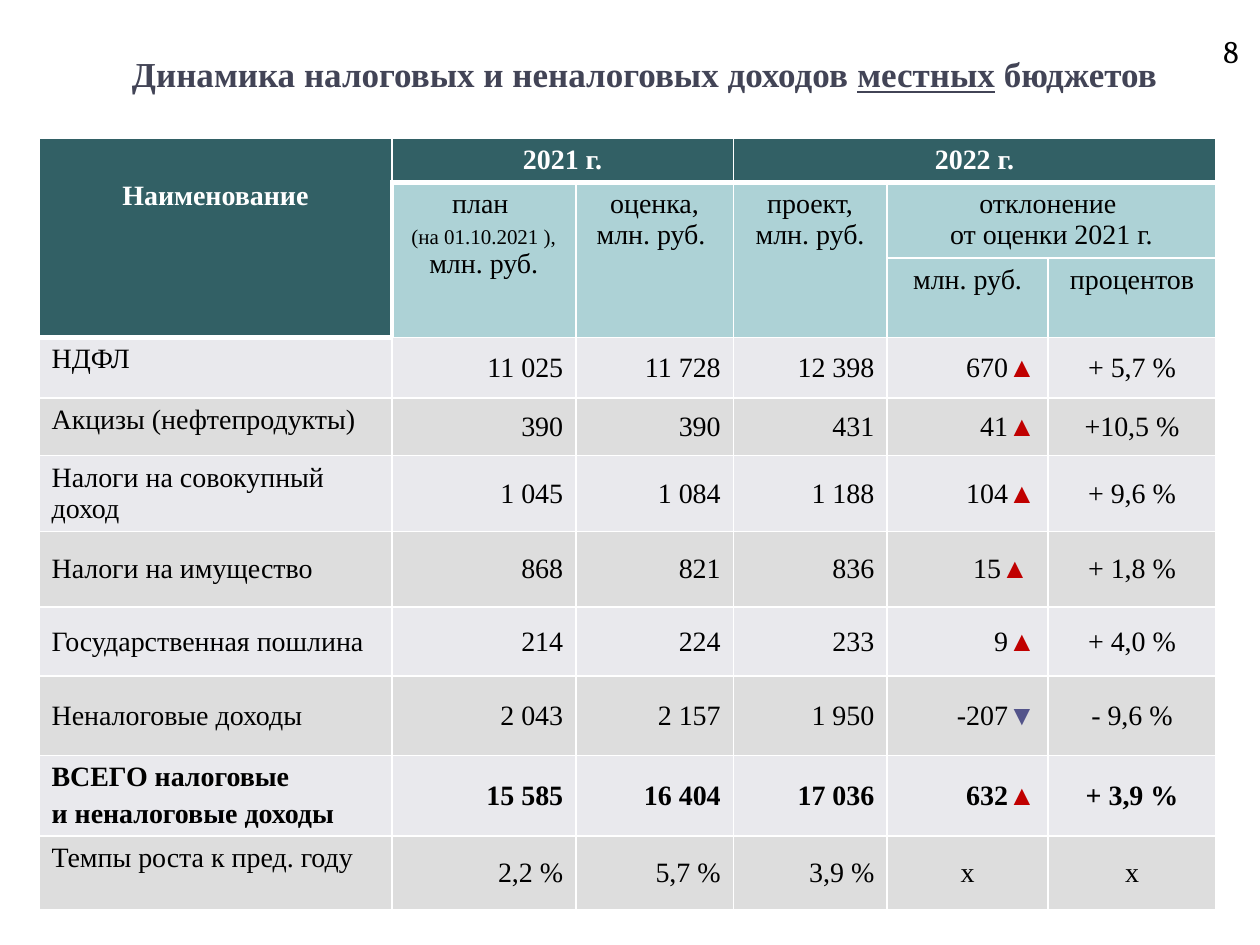
from lxml import etree
from pptx import Presentation
from pptx.dml import color
from pptx.enum import text
from pptx.oxml import ns
from pptx.util import Inches, Pt

FONT = "Times New Roman"
LEFT, CENTER, RIGHT = text.PP_ALIGN.LEFT, text.PP_ALIGN.CENTER, text.PP_ALIGN.RIGHT
TOP, MIDDLE, BOTTOM = text.MSO_ANCHOR.TOP, text.MSO_ANCHOR.MIDDLE, text.MSO_ANCHOR.BOTTOM
DARK, TEAL = "326065", "ADD2D6"
BANDS = ("E9E9ED", "DDDDDD")
ARROWS = {"▲": "C00000", "▼": "53548A"}
COLS = (2.8, 1.46, 1.25, 1.22, 1.28, 1.33)
ROWS = (0.33, 0.6, 0.63, 0.48, 0.46, 0.6, 0.6, 0.55, 0.63, 0.64, 0.58)
HEADER_ROWS = 3
TOTAL_ROW = 6

HEADERS = [
    (0, 0, 2, 0, DARK, [["Наименование"]]),
    (0, 1, 0, 2, DARK, [["2021 г."]]),
    (0, 3, 0, 5, DARK, [["2022 г."]]),
    (1, 1, 2, 1, TEAL, [["план "], ["(на 01.10.2021 ), ", "млн. руб."]]),
    (1, 2, 2, 2, TEAL, [["оценка, млн. руб. "]]),
    (1, 3, 2, 3, TEAL, [["проект, млн. руб."]]),
    (1, 4, 1, 5, TEAL, [["отклонение "], ["от оценки 2021 г."]]),
    (2, 4, 2, 4, TEAL, [["млн. руб."]]),
    (2, 5, 2, 5, TEAL, [["процентов"]]),
]

INCOME = [
    (TOP, ["НДФЛ"], "11 025", "11 728", "12 398", ["670", "▲"], "+ 5,7 %"),
    (TOP, ["Акцизы (нефтепродукты)"], "390", "390", "431", ["41", "▲"], "+10,5 %"),
    (TOP, ["Налоги на совокупный доход"], "1 045", "1 084", "1 188", ["104", "▲"], "+ 9,6 %"),
    (MIDDLE, ["Налоги на имущество"], "868", "821", "836", ["15", "▲ "], "+ 1,8 %"),
    (MIDDLE, ["Государственная пошлина"], "214", "224", "233", ["9", "▲"], "+ 4,0 %"),
    (MIDDLE, ["Неналоговые доходы"], "2 043", "2 157", "1 950", ["-207", "▼"], "- 9,6 %"),
    (TOP, ["ВСЕГО налоговые", "и неналоговые доходы"], "15 585", "16 404", "17 036",
     ["632", "▲"], "+ 3,9 %"),
    (TOP, ["Темпы роста к пред. году"], "2,2 %", "5,7 %", "3,9 %", ["х"], "х"),
]


def rgb(value):
    return color.RGBColor.from_string(value)


def add_run(p, content, size=16, fill="000000", bold=False, name=FONT, underline=False):
    r = p.add_run()
    r.text = content
    f = r.font
    f.size, f.bold, f.name, f.underline = Pt(size), bold, name, underline
    f.color.rgb = rgb(fill)


def space_before(p, percent):
    spc = etree.SubElement(p._p.get_or_add_pPr(), ns.qn("a:spcBef"))
    etree.SubElement(spc, ns.qn("a:spcPct")).set("val", str(percent * 1000))


def set_borders(cell, **widths):
    tc_pr = cell._tc.get_or_add_tcPr()
    for side in "LRTB":
        ln = etree.SubElement(tc_pr, ns.qn(f"a:ln{side}"), w=str(Pt(widths.get(side, 1))))
        fill = etree.SubElement(ln, ns.qn("a:solidFill"))
        etree.SubElement(fill, ns.qn("a:srgbClr"), val="FFFFFF")


def fill_cell(cell, paragraphs, align, anchor, fill="000000", bold=False, spacing=20):
    cell.vertical_anchor = anchor
    tf = cell.text_frame
    for i, runs in enumerate(paragraphs):
        p = tf.add_paragraph() if i else tf.paragraphs[0]
        p.alignment = align
        if spacing:
            space_before(p, spacing)
        for content in runs:
            arrow = ARROWS.get(content.strip())
            add_run(p, content, 12 if content.startswith("(") else 16,
                    arrow or fill, bold and not arrow)


def paint_cells(table):
    for i in range(len(ROWS)):
        for j in range(len(COLS)):
            cell = table.cell(i, j)
            thick = {}
            if i == 0 or (i < HEADER_ROWS and j == 0):
                thick["B"] = 3
            if i == 1 and j or (i == HEADER_ROWS and j == 0):
                thick["T"] = 3
            if i in (1, 2) and j == 1:
                thick["L"] = 3
            set_borders(cell, **thick)
            cell.fill.solid()
            if i < HEADER_ROWS:
                shade = DARK if i == 0 or j == 0 else TEAL
            else:
                shade = BANDS[(i - HEADER_ROWS) % 2]
            cell.fill.fore_color.rgb = rgb(shade)


def add_income_table(s):
    frame = s.shapes.add_table(len(ROWS), len(COLS), Inches(0.31), Inches(1.1),
                               Inches(sum(COLS)), Inches(sum(ROWS)))
    table = frame.table
    for col, width in zip(table.columns, COLS):
        col.width = Inches(width)
    for row, height in zip(table.rows, ROWS):
        row.height = Inches(height)
    paint_cells(table)
    for top, left, bottom, right, shade, paragraphs in HEADERS:
        cell = table.cell(top, left)
        if (top, left) != (bottom, right):
            cell.merge(table.cell(bottom, right))
        dark = shade == DARK
        fill_cell(cell, paragraphs, CENTER, TOP, "FFFFFF" if dark else "000000", dark,
                  0 if left == 4 else 20)
    table.cell(0, 0).margin_top = Inches(0.33)
    for i, (anchor, label, *values, change, percent) in enumerate(INCOME):
        bold = i == TOTAL_ROW
        cells = [table.cell(i + HEADER_ROWS, j) for j in range(len(COLS))]
        fill_cell(cells[0], [[line] for line in label], LEFT, anchor, bold=bold)
        for cell, value in zip(cells[1:4], values):
            fill_cell(cell, [[value]], RIGHT, MIDDLE, bold=bold)
        fill_cell(cells[4], [change], RIGHT if len(change) > 1 else CENTER, MIDDLE, bold=bold)
        fill_cell(cells[5], [[percent]], CENTER, MIDDLE, bold=bold)


def place(sp, left, top, width, height):
    sp.left, sp.top, sp.width, sp.height = map(Inches, (left, top, width, height))


def set_title(s):
    sp = s.shapes.title
    place(sp, 0.16, 0.31, 9.84, 0.55)
    tf = sp.text_frame
    tf.vertical_anchor = MIDDLE
    p = tf.paragraphs[0]
    p.alignment = CENTER
    for content, underline in ((" Динамика налоговых и неналоговых доходов ", False),
                               ("местных", True), (" бюджетов", False)):
        add_run(p, content, 20, "424456", True, underline=underline)


def add_page_number(s):
    sp = s.shapes.add_textbox(Inches(7.6), Inches(0.08), Inches(2.33), Inches(0.52))
    tf = sp.text_frame
    tf.word_wrap = True
    tf.vertical_anchor = BOTTOM
    p = tf.paragraphs[0]
    p.alignment = RIGHT
    add_run(p, "8", 18, name="Cambria")


def main():
    prs = Presentation()
    prs.slide_width, prs.slide_height = Inches(10), Inches(7.5)
    s = prs.slides.add_slide(prs.slide_layouts[5])
    set_title(s)
    add_income_table(s)
    add_page_number(s)
    prs.save("out.pptx")


if __name__ == "__main__":
    main()
